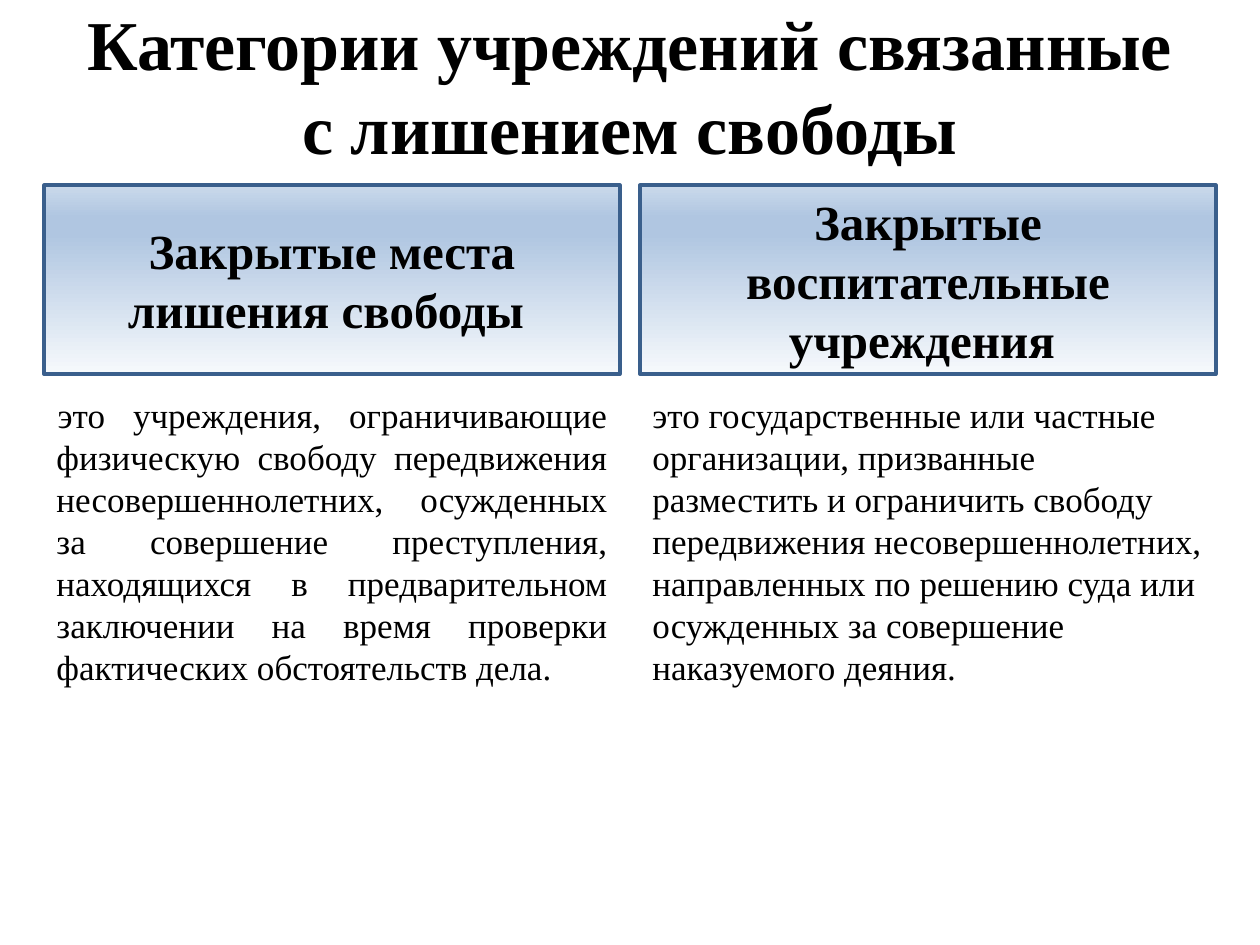
import copy
from dataclasses import dataclass

import lxml.etree
import pptx
import pptx.dml.color
import pptx.enum.shapes
import pptx.enum.text
import pptx.oxml.ns
import pptx.util

Inches = pptx.util.Inches
Align = pptx.enum.text.PP_ALIGN
Anchor = pptx.enum.text.MSO_ANCHOR
qn = pptx.oxml.ns.qn


@dataclass(frozen=True)
class Theme:
    font: str = "Times New Roman"
    text: str = "000000"
    border: str = "3A5F8C"
    border_width: float = 2
    gradient: tuple = ((0, "F6F9FC"), (0.74, "B0C6E1"), (0.83, "B0C6E1"), (1, "CAD9EB"))
    title_size: int = 40
    heading_size: int = 28
    body_size: int = 20


@dataclass(frozen=True)
class Column:
    heading: str
    body: str
    justified: bool = False


THEME = Theme()
MARGIN, GAP, WIDTH = 0.35, 0.16, 4.57
HEADING_TOP, HEADING_HEIGHT = 1.47, 1.5
BODY_TOP, BODY_HEIGHT = 3.07, 2.46

COLUMNS = [
    Column(
        "Закрытые места лишения свободы ",
        "это учреждения, ограничивающие физическую свободу передвижения "
        "несовершеннолетних, осужденных за совершение преступления, находящихся "
        "в предварительном заключении на время проверки фактических обстоятельств дела. ",
        justified=True,
    ),
    Column(
        "Закрытые воспитательные учреждения ",
        "это государственные или частные организации, призванные разместить и "
        "ограничить свободу передвижения несовершеннолетних, направленных по решению "
        "суда или осужденных за совершение наказуемого деяния.",
    ),
]


def rgb(value: str) -> pptx.dml.color.RGBColor:
    return pptx.dml.color.RGBColor.from_string(value)


def write(s, text: str, size: int, align, anchor, bold: bool = False):
    tf = s.text_frame
    tf.word_wrap = True
    tf.vertical_anchor = anchor
    p = tf.paragraphs[0]
    p.alignment = align
    r = p.add_run()
    r.text = text
    r.font.name = THEME.font
    r.font.size = pptx.util.Pt(size)
    r.font.bold = bold
    r.font.color.rgb = rgb(THEME.text)
    return p


def fill_gradient(s) -> None:
    s.fill.gradient()
    s.fill.gradient_angle = 90
    stops = s._element.spPr.find(qn("a:gradFill")).find(qn("a:gsLst"))
    while len(stops) < len(THEME.gradient):
        stops.append(copy.deepcopy(stops[0]))
    for stop, (position, color) in zip(s.fill.gradient_stops, THEME.gradient):
        stop.position = position
        stop.color.rgb = rgb(color)


def add_title(slide, text: str) -> None:
    s = slide.shapes.add_textbox(Inches(0.5), Inches(0.25), Inches(9), Inches(0.84))
    write(s, text, THEME.title_size, Align.CENTER, Anchor.MIDDLE, bold=True)


def add_heading(slide, left: float, text: str) -> None:
    s = slide.shapes.add_shape(
        pptx.enum.shapes.MSO_SHAPE.RECTANGLE,
        Inches(left), Inches(HEADING_TOP), Inches(WIDTH), Inches(HEADING_HEIGHT),
    )
    s.shadow.inherit = False
    fill_gradient(s)
    s.line.color.rgb = rgb(THEME.border)
    s.line.width = pptx.util.Pt(THEME.border_width)
    write(s, text, THEME.heading_size, Align.CENTER, Anchor.MIDDLE, bold=True)


def add_body(slide, left: float, column: Column) -> None:
    s = slide.shapes.add_textbox(
        Inches(left), Inches(BODY_TOP), Inches(WIDTH), Inches(BODY_HEIGHT)
    )
    align = Align.JUSTIFY if column.justified else Align.LEFT
    p = write(s, column.body, THEME.body_size, align, Anchor.TOP)
    s.text_frame.auto_size = pptx.enum.text.MSO_AUTO_SIZE.SHAPE_TO_FIT_TEXT
    if column.justified:
        pPr = p._p.get_or_add_pPr()
        pPr.set("marL", "0")
        pPr.set("indent", str(Inches(0.01)))
        tabs = lxml.etree.SubElement(pPr, qn("a:tabLst"))
        lxml.etree.SubElement(tabs, qn("a:tab"), pos=str(Inches(0.59)), algn="l")


def main() -> None:
    prs = pptx.Presentation()
    prs.slide_width, prs.slide_height = Inches(10), Inches(7.5)
    slide = prs.slides.add_slide(prs.slide_layouts[6])
    add_title(slide, "Категории учреждений связанные с лишением свободы")
    for i, column in enumerate(COLUMNS):
        left = MARGIN + i * (WIDTH + GAP)
        add_heading(slide, left, column.heading)
        add_body(slide, left, column)
    prs.save("out.pptx")


if __name__ == "__main__":
    main()
